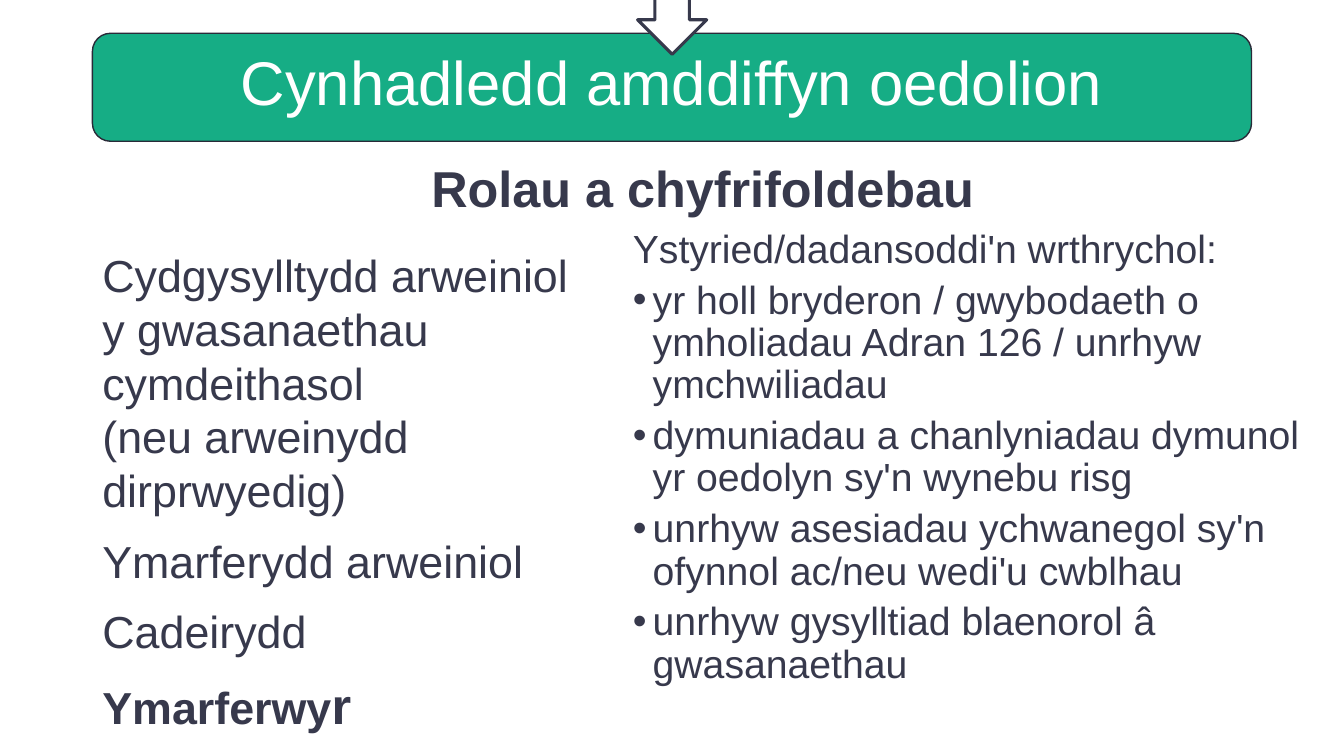
from pptx import Presentation
from pptx import util as u
from pptx.dml.color import RGBColor
from pptx.enum import shapes, text
from pptx.oxml import parse_xml
from pptx.oxml.ns import nsdecls

GREEN = RGBColor(0x16, 0xAD, 0x85)
NAVY = RGBColor(0x37, 0x39, 0x4C)
DARK = RGBColor(0x29, 0x2A, 0x38)
WHITE = RGBColor(0xFF, 0xFF, 0xFF)

TITLE = ["Cynhadledd amddiffyn oedolion"]
HEADING = ["Rolau a chyfrifoldebau"]
LEAD_ROLE = ["Cydgysylltydd arweiniol y gwasanaethau cymdeithasol"]
ROLES = ["(neu arweinydd dirprwyedig)", "Ymarferydd arweiniol", "Cadeirydd"]
CONSIDERED = ["Ystyried/dadansoddi'n wrthrychol:"]
POINTS = [
    "yr holl bryderon / gwybodaeth o ymholiadau Adran 126 / unrhyw ymchwiliadau",
    "dymuniadau a chanlyniadau dymunol yr oedolyn sy'n wynebu risg",
    "unrhyw asesiadau ychwanegol sy'n ofynnol ac/neu wedi'u cwblhau",
    "unrhyw gysylltiad blaenorol â gwasanaethau",
]
INDENT = u.Cm(0.5)

presentation = Presentation()
presentation.slide_width = u.Cm(33.87)
presentation.slide_height = u.Cm(19.05)
slide = presentation.slides.add_slide(presentation.slide_layouts[6])


def write(frame, lines, size, colour=NAVY, bold=False, align=text.PP_ALIGN.LEFT,
          spacing=1.0, after=0, bullet=False):
    for line in lines:
        paragraph = frame.paragraphs[0]
        if paragraph.runs:
            paragraph = frame.add_paragraph()
        paragraph.alignment = align
        paragraph.line_spacing = spacing
        paragraph.space_before = u.Pt(0)
        paragraph.space_after = u.Pt(after)
        if bullet:
            properties = paragraph._p.get_or_add_pPr()
            properties.set("marL", str(INDENT))
            properties.set("indent", str(-INDENT))
            properties.append(parse_xml(f'<a:buFont {nsdecls("a")} typeface="Arial"/>'))
            properties.append(parse_xml(f'<a:buChar {nsdecls("a")} char="•"/>'))
        add_run(paragraph, line, size, colour, bold)
    return paragraph


def add_run(paragraph, line, size, colour=NAVY, bold=False):
    run = paragraph.add_run()
    run.text = line
    run.font.name = "Arial"
    run.font.size = u.Pt(size)
    run.font.bold = bold
    run.font.color.rgb = colour


def add_panel(kind, left, top, width, height, fill, line, weight):
    shape = slide.shapes.add_shape(kind, u.Cm(left), u.Cm(top), u.Cm(width), u.Cm(height))
    shape.shadow.inherit = False
    shape.fill.solid()
    shape.fill.fore_color.rgb = fill
    shape.line.color.rgb = line
    shape.line.width = u.Pt(weight)
    return shape


def add_frame(left, top, width, height):
    frame = slide.shapes.add_textbox(u.Cm(left), u.Cm(top), u.Cm(width), u.Cm(height)).text_frame
    frame.word_wrap = True
    frame.auto_size = text.MSO_AUTO_SIZE.SHAPE_TO_FIT_TEXT
    return frame


banner = add_panel(shapes.MSO_SHAPE.ROUNDED_RECTANGLE, 2.33, 0.84, 29.21, 2.72, GREEN, DARK, 1)
banner.text_frame.word_wrap = True
banner.text_frame.vertical_anchor = text.MSO_ANCHOR.MIDDLE
write(banner.text_frame, TITLE, 44, colour=WHITE, align=text.PP_ALIGN.CENTER, spacing=0.8)

add_panel(shapes.MSO_SHAPE.DOWN_ARROW, 16.07, -1.17, 1.74, 2.54, WHITE, NAVY, 2.25)

heading = add_frame(2.82, 4.01, 29.79, 1.65)
write(heading, HEADING, 36, bold=True, align=text.PP_ALIGN.CENTER, spacing=0.9, after=6)

roles = add_frame(2.33, 6.12, 12.83, 12.65)
write(roles, LEAD_ROLE, 32)
write(roles, ROLES, 32, after=12)
practitioners = write(roles, ["Ymarferwy"], 32, bold=True, after=12)
add_run(practitioners, "r", 36, bold=True)

considerations = add_frame(15.7, 5.66, 17.32, 11.89)
write(considerations, CONSIDERED, 28, spacing=0.9, after=6)
write(considerations, POINTS, 28, spacing=0.9, after=6, bullet=True)

presentation.save("out.pptx")
